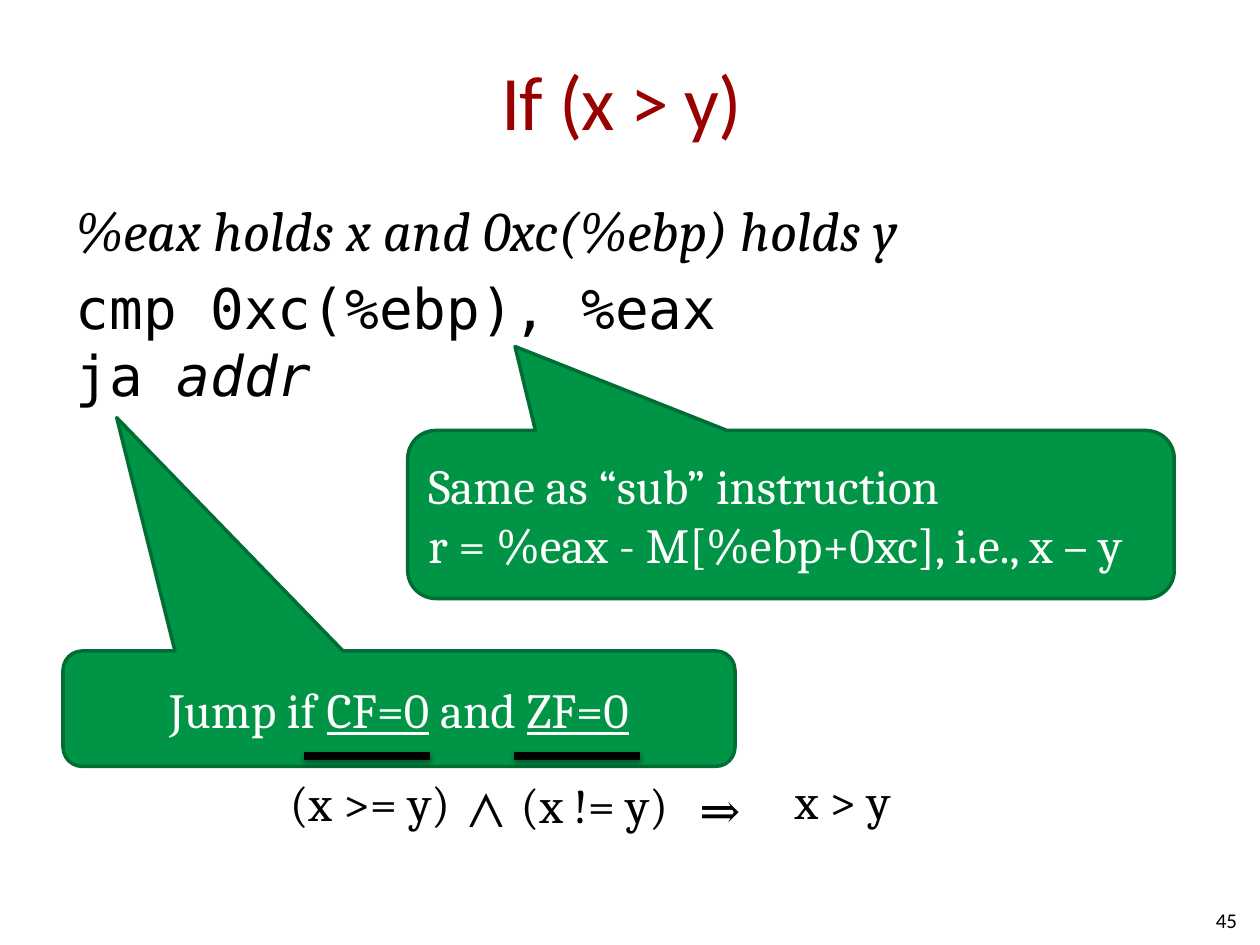
import dataclasses

import pptx
import pptx.dml.color
import pptx.enum.shapes
import pptx.enum.text
import pptx.oxml
import pptx.oxml.ns
import pptx.util

Pt = pptx.util.Pt
Align = pptx.enum.text.PP_ALIGN
Anchor = pptx.enum.text.MSO_ANCHOR


def rgb(code):
    return pptx.dml.color.RGBColor.from_string(code)


@dataclasses.dataclass(frozen=True)
class Theme:
    heading: str = "Calibri"
    serif: str = "Cambria"
    mono: str = "DejaVu Sans Mono"
    red: str = "990000"
    black: str = "000000"
    white: str = "FFFFFE"
    green: str = "009446"
    dark_green: str = "006D34"
    title_size: int = 44
    body_size: int = 32
    note_size: int = 28
    number_size: int = 12


THEME = Theme()
TITLE = dict(name=THEME.heading, size=Pt(THEME.title_size), color=THEME.red)
PREMISE = dict(name=THEME.serif, size=Pt(THEME.body_size), color=THEME.black, italic=True)
CODE = {**PREMISE, "name": THEME.mono, "italic": False}
CODE_ITALIC = {**CODE, "italic": True}
NOTE = dict(name=THEME.serif, size=Pt(THEME.note_size), color=THEME.white)
FLAG = {**NOTE, "underline": True}
LOGIC = {**NOTE, "color": THEME.black}
NUMBER = dict(name=THEME.heading, size=Pt(THEME.number_size), color=THEME.black)


def place(box, area):
    for side, length in zip(("left", "top", "width", "height"), area):
        setattr(box, side, Pt(length))


def write(box, paragraphs, align=Align.LEFT, **frame_format):
    """Fill a shape with paragraphs, each a list of (text, font format) spans."""
    frame = box.text_frame
    settings = dict(word_wrap=True, auto_size=pptx.enum.text.MSO_AUTO_SIZE.NONE)
    for key, value in {**settings, **frame_format}.items():
        setattr(frame, key, value)
    for index, spans in enumerate(paragraphs):
        para = frame.add_paragraph() if index else frame.paragraphs[0]
        para.alignment = align
        for text, font_format in spans:
            for number, line in enumerate(text.split("\n")):
                if number:
                    para.add_line_break()
                span = para.add_run()
                span.text = line
                for key, value in font_format.items():
                    if key == "color":
                        span.font.color.rgb = rgb(value)
                    else:
                        setattr(span.font, key, value)


def add_title(page, text):
    title = page.shapes.title
    place(title, (36, 12, 648, 90))
    write(title, [[(text, TITLE)]], Align.CENTER, vertical_anchor=Anchor.MIDDLE,
          margin_left=0, margin_right=0)
    title.text_frame.paragraphs[0].runs[0].font._element.set("spc", "-50")


def add_body(page, paragraphs):
    body = page.placeholders[1]
    place(body, (36, 108, 636, 374))
    write(body, paragraphs)
    for para in body.text_frame.paragraphs:
        properties = para._p.get_or_add_pPr()
        properties.set("marL", "0")
        properties.set("indent", "0")
        namespace = pptx.oxml.ns.nsdecls("a")
        properties.append(pptx.oxml.parse_xml(f"<a:buNone {namespace}/>"))


def add_callout(page, area, tip, paragraphs, align=Align.LEFT):
    """Add a rounded callout whose tip is an offset from its centre, in box sizes."""
    kind = pptx.enum.shapes.MSO_SHAPE.ROUNDED_RECTANGULAR_CALLOUT
    callout = page.shapes.add_shape(kind, *map(Pt, area))
    callout.shadow.inherit = False
    callout.adjustments[0], callout.adjustments[1] = tip
    callout.fill.solid()
    callout.fill.fore_color.rgb = rgb(THEME.green)
    callout.line.color.rgb = rgb(THEME.dark_green)
    callout.line.width = Pt(2)
    write(callout, paragraphs, align, vertical_anchor=Anchor.MIDDLE)


def add_underline(page, left, top, width):
    kind = pptx.enum.shapes.MSO_CONNECTOR.STRAIGHT
    bar = page.shapes.add_connector(kind, Pt(left), Pt(top), Pt(left + width), Pt(top))
    bar.line.color.rgb = rgb(THEME.black)
    bar.line.width = Pt(5)
    bar._element.spPr.append(pptx.oxml.parse_xml(
        f'<a:effectLst {pptx.oxml.ns.nsdecls("a")}>'
        f'<a:outerShdw blurRad="{Pt(3.1)}" dist="{Pt(1.6)}" dir="5400000" rotWithShape="0">'
        f'<a:srgbClr val="{THEME.black}"><a:alpha val="38000"/></a:srgbClr>'
        '</a:outerShdw></a:effectLst>'))


def add_label(page, area, text, font_format, align=Align.LEFT, **frame_format):
    label = page.shapes.add_textbox(*map(Pt, area))
    write(label, [[(text, font_format)]], align, **frame_format)


def main():
    deck = pptx.Presentation()
    deck.slide_width, deck.slide_height = Pt(720), Pt(540)
    page = deck.slides.add_slide(deck.slide_layouts[1])

    add_title(page, "If (x > y) ")
    add_body(page, [
        [("%eax holds x and 0xc(%ebp) holds y", PREMISE)],
        [("cmp 0xc(%ebp), %eax \nja ", CODE), ("addr", CODE_ITALIC)],
    ])
    add_label(page, (546, 511, 168, 29), "45", NUMBER, Align.RIGHT,
              vertical_anchor=Anchor.MIDDLE)

    add_callout(page, (233, 246, 438, 96), (-0.36, -1), [
        [("Same as “sub” instruction", NOTE)],
        [("r = %eax - M[%ebp+0xc], i.e., x – y", NOTE)],
    ])
    add_callout(page, (36, 372, 384, 66), (-0.42, -2.52), [
        [("Jump if ", NOTE), ("CF=0", FLAG), (" and ", NOTE), ("ZF=0", FLAG)],
    ], Align.CENTER)

    for left in (174, 294):
        add_underline(page, left, 432, 72)
    for left, top, width, text in (
        (158.5, 438, 108, "(x >= y)"),
        (290.5, 439, 100, "(x != y)"),
        (260.5, 441.5, 34, "⋀"),
        (447, 437, 70.5, "x > y"),
        (392.5, 442, 39, "⇒"),
    ):
        add_label(page, (left, top, width, 41), text, LOGIC, word_wrap=False,
                  auto_size=pptx.enum.text.MSO_AUTO_SIZE.SHAPE_TO_FIT_TEXT)

    deck.save("out.pptx")


if __name__ == "__main__":
    main()
